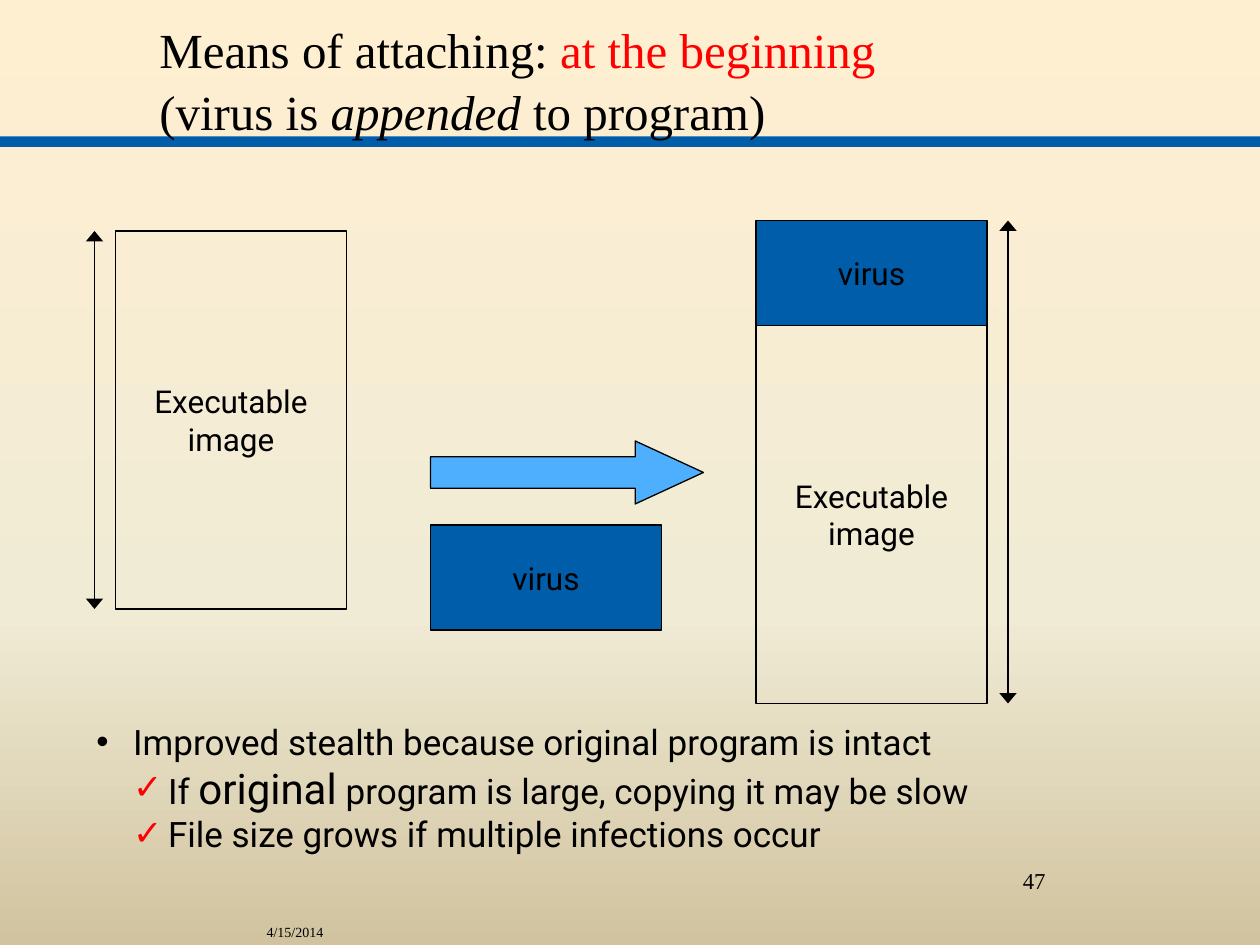
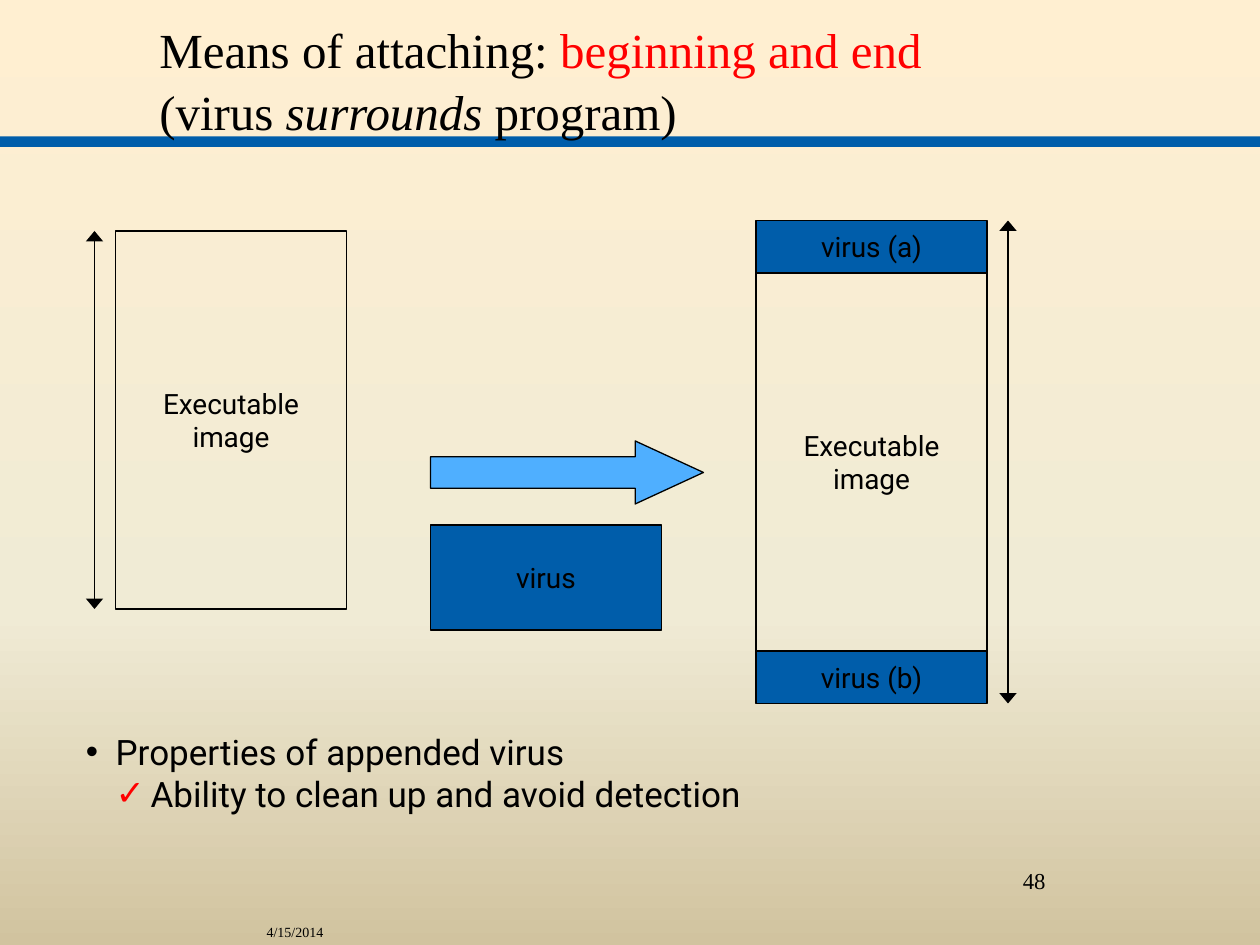
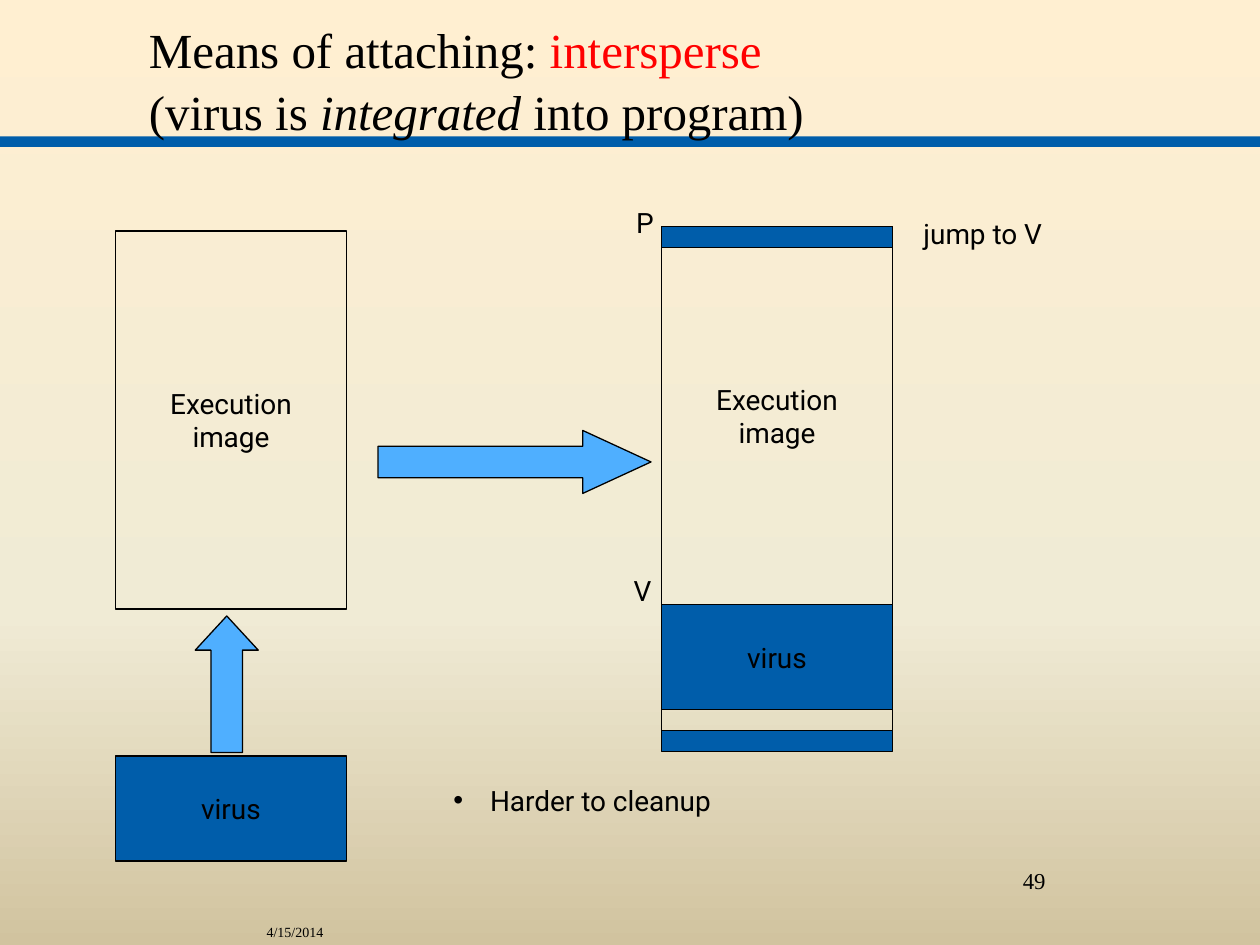
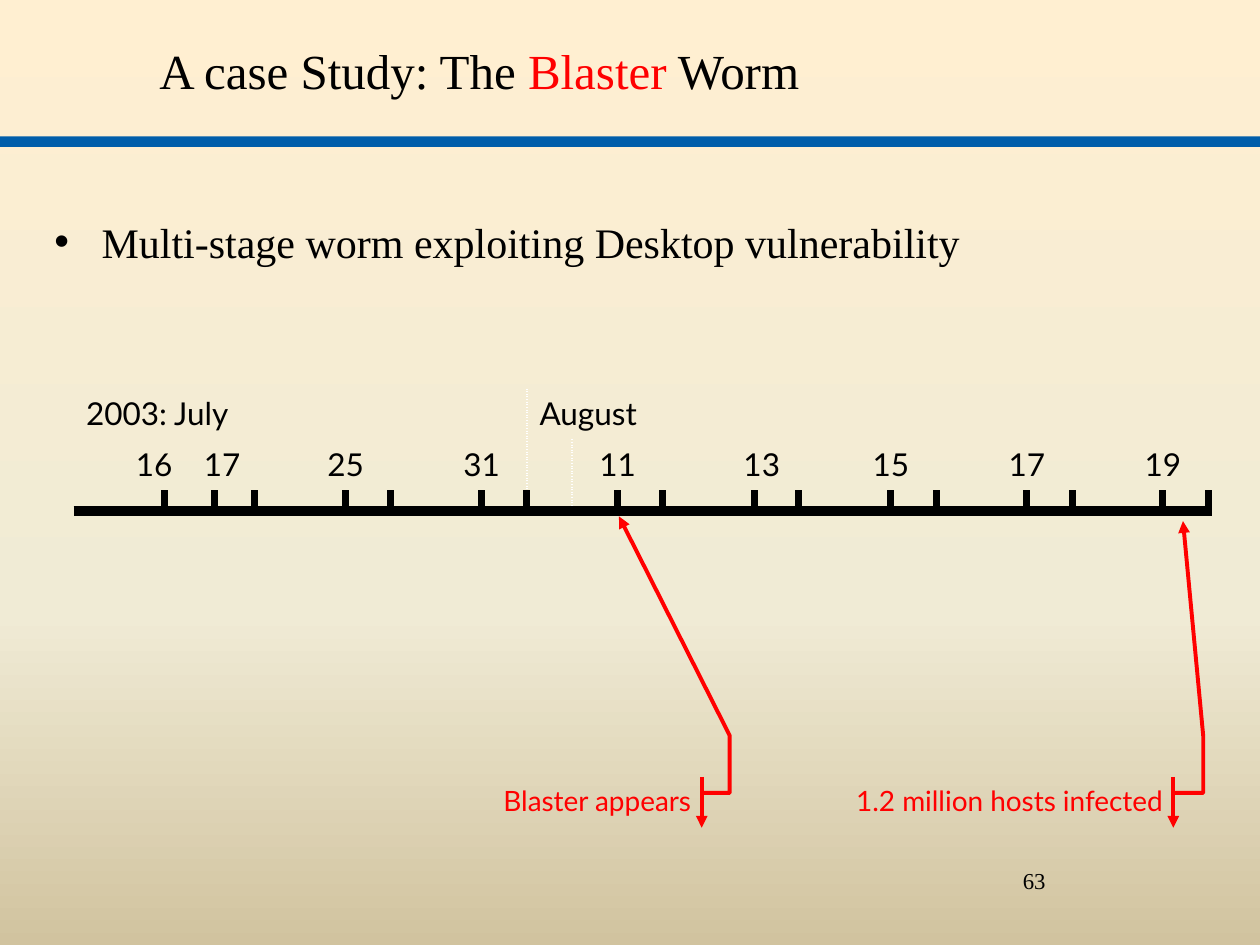
from copy import deepcopy

from lxml import etree
from pptx import Presentation
from pptx.dml.color import RGBColor
from pptx.enum import dml, shapes, text
from pptx.oxml.ns import qn
from pptx.util import Pt

# Shared look
BLACK, RED, BLUE, SKY, WHITE = "000000", "FF0000", "005DAA", "4FAFFF", "FFFFFF"
BACKDROP = [(0, "FFEFD1"), (0.65, "F0EBD5"), (1, "D1C39F")]
SERIF, SANS, LABEL = "Times New Roman", "Roboto", "Lato"
LEFT, CENTER, RIGHT = text.PP_ALIGN.LEFT, text.PP_ALIGN.CENTER, text.PP_ALIGN.RIGHT
BOX_W = 132
DATE = "4/15/2014"

# Runs are (text, options); titles are lists of lines
EXECUTABLE, EXECUTION = ["Executable", "image"], ["Execution", "image"]
VIRUS = ["virus"]


def means(kind, before, how, after):
    return [[("Means of attaching: ", {}), (kind, {"color": RED})],
            [(before, {}), (how, {"italic": True}), (after, {})]]


# Boxes are (lines, height, filled), stacked downwards from (x, y)
DIAGRAMS = [
    {"title": means("at the beginning", "(virus is ", "appended", " to program)"),
     "title_x": 84, "number": 47, "size": 18,
     "stacks": [(66, 132, [(EXECUTABLE, 216, False)]),
                (246, 300, [(VIRUS, 60, True)]),
                (432, 126, [(VIRUS, 60, True), (EXECUTABLE, 216, False)])],
     "arrows": [(246, 252, 156, 1.083, 0)],
     "spans": [(54, 132, 348), (576, 126, 402)],
     "labels": [],
     "bullets": (48, 408, 626, 85, 20, 21, [
         (0, [("Improved stealth because original program is intact", {})]),
         (1, [("If ", {}), ("original", {"size": 24}),
              (" program is large, copying it may be slow", {})]),
         (1, [("File size grows if multiple infections occur", {})])])},
    {"title": means("beginning and end", "(virus ", "surrounds", " program)"),
     "title_x": 84, "number": 48, "size": 16,
     "stacks": [(66, 132, [(EXECUTABLE, 216, False)]),
                (246, 300, [(VIRUS, 60, True)]),
                (432, 126, [(["virus (a)"], 30, True), (EXECUTABLE, 216, False),
                            (["virus (b)"], 30, True)])],
     "arrows": [(246, 252, 156, 1.083, 0)],
     "spans": [(54, 132, 348), (576, 126, 402)],
     "labels": [],
     "bullets": (42, 414, 626, 55, 20, 17, [
         (0, [("Properties of appended virus", {})]),
         (1, [("Ability to clean up and avoid detection", {})])])},
    {"title": means("intersperse", "(virus is ", "integrated", " into program)"),
     "title_x": 78, "number": 49, "size": 16,
     "stacks": [(66, 432, [(VIRUS, 60, True)]),
                (66, 132, [(EXECUTION, 216, False)]),
                (378, 129.6, [(EXECUTION, 216, False), (VIRUS, 60, True),
                              ([], 12, False), ([], 12, True)]),
                (378, 129.6, [([], 12, True)])],
     "arrows": [(216, 246, 156, 1.083, 0), (90.6, 373, 78, 0.542, 270)],
     "spans": [],
     "labels": [("P", 356.4, 114, 28), ("V", 355, 324, 29), ("jump to V", 520.6, 120, 118)],
     "bullets": (252, 444, 402, 36, 16, 21, [(0, [("Harder to cleanup", {})])])},
]

CASE = {"title": [[("A case Study: The ", {}), ("Blaster", {"color": RED}), (" Worm", {})]],
        "number": 63,
        "bullet": "Multi-stage worm exploiting Desktop vulnerability"}
MONTHS = [("2003: July", 0, 10), ("August", 11, 25)]    # label, first and last column
DAYS = {1: "16", 3: "17", 6: "25", 9: "31", 12: "11",   # column left of the tick
        15: "13", 18: "15", 21: "17", 24: "19"}
COL_INCHES = [0.36] * 2 + [0.2] * 2 + [0.32] + [0.36] * 9 + [0.49, 0.23, 0.35, 0.37] + [0.36] * 8
ROW_H = [29, 29, 12, 14]
CALLOUTS = [
    ("Blaster appears", 264, 131, (0.313, 1.046, 0.313, 1.168, -0.817, 1.168, -5.135, 0.685)),
    ("1.2 million hosts infected", 468, 196.6,
     (0.313, 1.03, 0.313, 1.117, -0.804, 1.117, -5.043, 1.058))]


# Helpers
def rgb(code):
    return RGBColor.from_string(code)


def pts(*values):
    return [Pt(v) for v in values]


def child(parent, tag, **attrs):
    return etree.SubElement(parent, qn(tag), attrs)


def add_run(p, words, size, font, color=BLACK, italic=None):
    r = p.add_run()
    r.text = words
    r.font.size, r.font.name, r.font.italic = Pt(size), font, italic
    r.font.color.rgb = rgb(color)


def add_runs(p, runs, size, font):
    for words, options in runs:
        add_run(p, words, **{"size": size, "font": font, **options})


def paragraphs(tf, count):
    return [tf.paragraphs[0]] + [tf.add_paragraph() for _ in range(count - 1)]


def text_box(s, x, y, w, h, wrap=True):
    tf = s.shapes.add_textbox(*pts(x, y, w, h)).text_frame
    tf.word_wrap = wrap
    return tf


def line_of_text(s, at, words, size, font, align=LEFT, wrap=True):
    p = text_box(s, *at, wrap=wrap).paragraphs[0]
    p.alignment = align
    add_run(p, words, size, font)


def add_bullet(p, hang, level=0):
    pPr = p._p.get_or_add_pPr()
    margin = hang + 20 * level if level else hang
    pPr.set("marL", str(Pt(margin)))
    pPr.set("indent", str(-Pt(20 if level else hang)))
    if level:
        p.level = level
        child(child(pPr, "a:buClr"), "a:srgbClr", val=RED)
    child(pPr, "a:buFont", typeface="Arial")
    child(pPr, "a:buChar", char="✓" if level else "•")


def add_shape(s, kind, x, y, w, h, fill=None, line=BLACK, width=0.75):
    sp = s.shapes.add_shape(kind, *pts(x, y, w, h))
    sp.shadow.inherit = False
    if fill:
        sp.fill.solid()
        sp.fill.fore_color.rgb = rgb(fill)
    else:
        sp.fill.background()
    if line:
        sp.line.color.rgb, sp.line.width = rgb(line), Pt(width)
    else:
        sp.line.fill.background()
    return sp


def arrowheads(sp, *ends, width="med"):
    ln = sp._element.xpath(".//a:ln")[0]
    for end in ends:
        child(ln, end, type="triangle", w=width, len="med")


def set_backdrop(master):
    fill = master.background.fill
    fill.gradient()
    fill.gradient_angle = 270
    stops = master.element.xpath(".//p:bg//a:gsLst")[0]
    stops.append(deepcopy(stops[0]))
    for stop, (position, color) in zip(fill.gradient_stops, BACKDROP):
        stop.position, stop.color.rgb = position, rgb(color)


# Band, title, number and date of every slide
def new_slide(prs, title, number, title_at, date=None):
    s = prs.slides.add_slide(prs.slide_layouts[6])
    add_shape(s, shapes.MSO_SHAPE.RECTANGLE, 0, 78, 720, 6, BLUE, line=None)
    if date:
        line_of_text(s, (48, 524, 144, 12), date, 8, SERIF, RIGHT)
    line_of_text(s, (516, 492, 150, 36), str(number), 13, SERIF, CENTER)
    tf = text_box(s, *title_at)
    tf.vertical_anchor = text.MSO_ANCHOR.MIDDLE
    p = tf.paragraphs[0]
    p.line_spacing = 1.05
    for i, runs in enumerate(title):
        if i:
            p.add_line_break()
        add_runs(p, runs, 28, SERIF)
    return s


# Diagram parts
def add_stack(s, x, y, boxes, size):
    for lines, height, filled in boxes:
        sp = add_shape(s, shapes.MSO_SHAPE.RECTANGLE, x, y, BOX_W, height, BLUE if filled else None)
        tf = sp.text_frame
        tf.word_wrap = False
        tf.vertical_anchor = text.MSO_ANCHOR.MIDDLE
        for p, words in zip(paragraphs(tf, len(lines)), lines):
            p.alignment = CENTER
            add_run(p, words, size, SANS)
        y += height


def add_span(s, x, top, bottom):
    c = s.shapes.add_connector(shapes.MSO_CONNECTOR.STRAIGHT, *pts(x, top, x, bottom))
    c.line.color.rgb, c.line.width = rgb(BLACK), Pt(0.75)
    arrowheads(c, "a:headEnd", "a:tailEnd", width="lg")
    child(c._element.spPr, "a:effectLst")


def diagram_slide(prs, d):
    s = new_slide(prs, d["title"], d["number"], (d["title_x"], 0, 582, 90), DATE)
    for x, y, boxes in d["stacks"]:
        add_stack(s, x, y, boxes, d["size"])
    for x, y, w, head, turn in d["arrows"]:
        sp = add_shape(s, shapes.MSO_SHAPE.RIGHT_ARROW, x, y, w, 36, SKY)
        sp.adjustments[0], sp.adjustments[1] = 0.5, head
        sp.rotation = turn
    for span in d["spans"]:
        add_span(s, *span)
    for words, x, y, w in d["labels"]:
        line_of_text(s, (x, y, w, 36), words, 16, SANS, wrap=False)
    x, y, w, h, size, hang, items = d["bullets"]
    tf = text_box(s, x, y, w, h)
    for p, (level, runs) in zip(paragraphs(tf, len(items)), items):
        add_bullet(p, hang, level)
        add_runs(p, runs, size, SANS)


# Timeline table
def add_border(cell, side, color, width, dash="solid"):
    tcPr = cell._tc.get_or_add_tcPr()
    ln = etree.Element(qn("a:ln" + side), w=str(Pt(width)))
    child(child(ln, "a:solidFill"), "a:srgbClr", val=color)
    child(ln, "a:prstDash", val=dash)
    tcPr.insert(len(tcPr) - 1, ln)      # borders come before the fill


def add_label(table, row, first, last, words, align):
    cell = table.cell(row, first)
    cell.merge(table.cell(row, last))
    p = cell.text_frame.paragraphs[0]
    p.alignment = align
    add_run(p, words, 18, LABEL)


def add_timeline(s, x, y):
    frame = s.shapes.add_table(len(ROW_H), len(COL_INCHES), *pts(x, y, 648, sum(ROW_H)))
    table = frame.table
    table.first_row = table.horz_banding = False
    style = table._tbl.tblPr.find(qn("a:tableStyleId"))
    style.text = "{2D5ABB26-0587-4C30-8999-92F81FD0307C}"   # no style, no grid
    for column, inches in zip(table.columns, COL_INCHES):
        column.width = Pt(inches * 72)
    for row, height in zip(table.rows, ROW_H):
        row.height = Pt(height)
    for words, first, last in MONTHS:
        add_label(table, 0, first, last, words, LEFT)
    for col, day in DAYS.items():
        add_label(table, 1, col, col + 1, day, CENTER)
    for row in (2, 3):
        table.cell(row, 2).merge(table.cell(row, 3))
    for row in range(len(ROW_H)):
        for col in range(len(COL_INCHES)):
            cell = table.cell(row, col)
            cell.fill.background()
            if row >= 2:
                cell.margin_top = cell.margin_bottom = 0
                cell.text_frame.paragraphs[0]._p.get_or_add_endParaRPr().set("sz", "800")
            if row == 2 and col - 1 in DAYS:
                add_border(cell, "L", BLACK, 4.5)
            if row < 3 and col == MONTHS[1][1]:
                add_border(cell, "L", WHITE, 1.5, "sysDot")
            if row == 2 and col in DAYS:
                add_border(cell, "R", BLACK, 4.5)
            if row == 2:
                add_border(cell, "B", BLACK, 6)


def case_slide(prs):
    s = new_slide(prs, CASE["title"], CASE["number"], (84, 6, 582, 66))
    p = text_box(s, 24, 120, 648, 356).paragraphs[0]
    add_bullet(p, 27)
    add_run(p, CASE["bullet"], 24, SERIF)
    add_timeline(s, 42, 222)
    for words, x, w, bends in CALLOUTS:
        sp = add_shape(s, shapes.MSO_SHAPE.LINE_CALLOUT_3_ACCENT_BAR, x, 444, w, 29,
                       line=RED, width=2.25)
        for i, bend in enumerate(bends):
            sp.adjustments[i] = bend
        arrowheads(sp, "a:tailEnd")
        tf = sp.text_frame
        tf.margin_left = tf.margin_right = 0
        tf.vertical_anchor = text.MSO_ANCHOR.TOP
        tf.word_wrap = True
        tf.paragraphs[0].alignment = RIGHT
        add_run(tf.paragraphs[0], words, 16, LABEL, RED)


def main():
    prs = Presentation()
    prs.slide_width, prs.slide_height = pts(720, 540)
    set_backdrop(prs.slide_master)
    for d in DIAGRAMS:
        diagram_slide(prs, d)
    case_slide(prs)
    prs.save("out.pptx")


if __name__ == "__main__":
    main()
